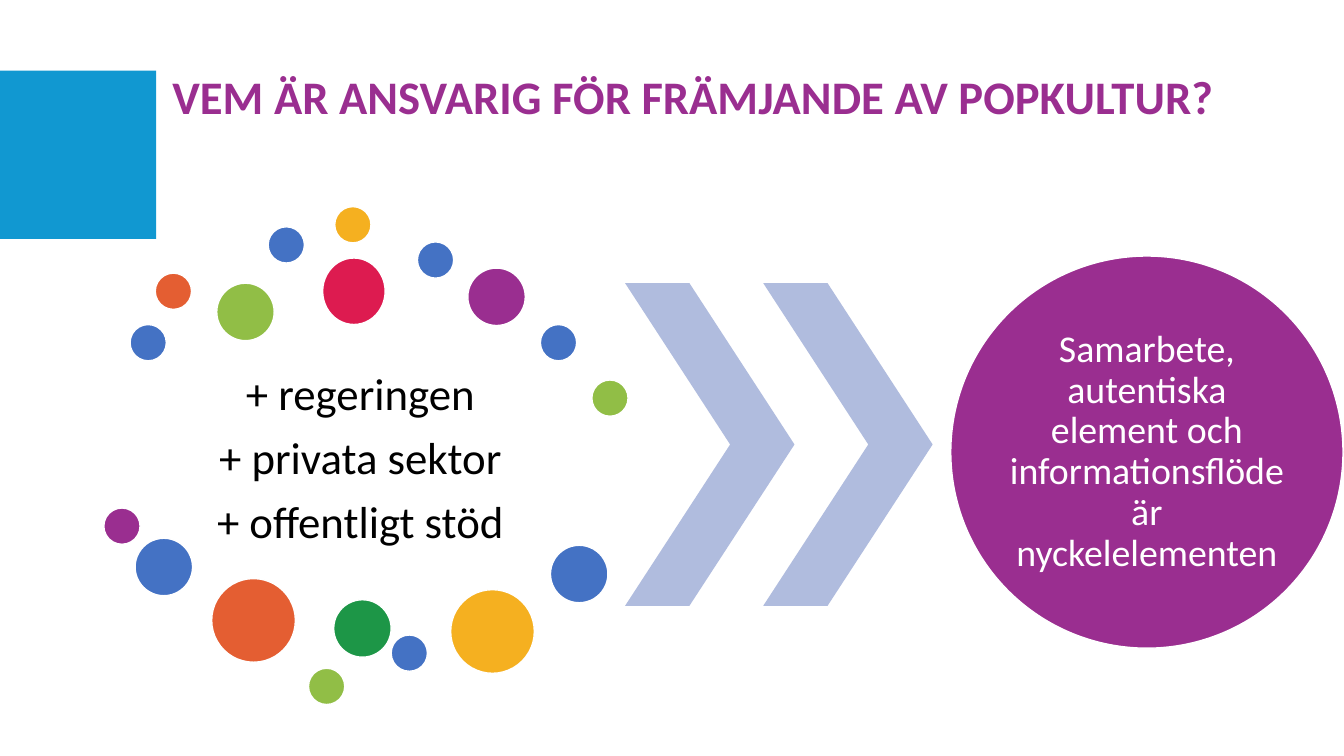
from dataclasses import dataclass

from pptx import Presentation
from pptx.dml.color import RGBColor
from pptx.enum.shapes import MSO_SHAPE
from pptx.enum.text import MSO_ANCHOR, MSO_AUTO_SIZE, PP_ALIGN
from pptx.oxml.ns import qn
from pptx.util import Inches, Pt

RECTANGLE, OVAL, CHEVRON = MSO_SHAPE.RECTANGLE, MSO_SHAPE.OVAL, MSO_SHAPE.CHEVRON
TOP, MIDDLE = MSO_ANCHOR.TOP, MSO_ANCHOR.MIDDLE
LEFT, CENTER = PP_ALIGN.LEFT, PP_ALIGN.CENTER
NO_FIT = MSO_AUTO_SIZE.NONE
TITLE_AND_CONTENT = 1

# The slide is laid out on a grid of square cells, ten to the inch.
CELL = Inches(0.1)
SMALL, MEDIUM, LARGE = 3.6, 5.7, 8.3


@dataclass(frozen=True)
class Theme:
    font: str = "Calibri"
    title_size: float = 33.3
    list_size: float = 32
    result_size: float = 27
    line_spacing: float = 0.9
    list_gap: float = 11.2
    outline: float = 1
    white: str = "FFFFFF"
    black: str = "000000"
    sky: str = "1198D1"
    blue: str = "4472C4"
    orange: str = "E45E32"
    lime: str = "91BE46"
    yellow: str = "F5B020"
    purple: str = "9A2E90"
    red: str = "DD1B50"
    green: str = "1D9647"
    lavender: str = "B0BCDE"


THEME = Theme()

TITLE = "VEM ÄR ANSVARIG FÖR FRÄMJANDE AV POPKULTUR?"
ACTORS = ("+ regeringen", "+ privata sektor", "+ offentligt stöd")
RESULT = "Samarbete, autentiska element och informationsflöde är nyckelelementen"

# column, row, diameter, colour
DOTS = (
    (12.9, 32.2, SMALL, THEME.blue),
    (15.4, 27.1, SMALL, THEME.orange),
    (21.5, 28.1, MEDIUM, THEME.lime),
    (26.6, 22.5, SMALL, THEME.blue),
    (33.2, 20.5, SMALL, THEME.yellow),
    (41.4, 24, SMALL, THEME.blue),
    (46.4, 26.6, MEDIUM, THEME.purple),
    (53.6, 32.2, SMALL, THEME.blue),
    (58.7, 37.7, SMALL, THEME.lime),
    (10.3, 50.4, SMALL, THEME.purple),
    (13.4, 53.4, MEDIUM, THEME.blue),
    (21, 57.4, LARGE, THEME.orange),
    (30.6, 66.3, SMALL, THEME.lime),
    (33.1, 59.5, MEDIUM, THEME.green),
    (38.8, 63, SMALL, THEME.blue),
    (44.7, 58.5, LARGE, THEME.yellow),
    (54.6, 54.1, MEDIUM, THEME.blue),
)


def cells(*counts):
    return [round(count * CELL) for count in counts]


def add_solid(slide, kind, place, color, outlined=False):
    """Add a flat filled shape at (column, row, columns, rows)."""
    shape = slide.shapes.add_shape(kind, *cells(*place))
    shape.shadow.inherit = False
    shape.fill.solid()
    shape.fill.fore_color.rgb = RGBColor.from_string(color)
    if outlined:
        shape.line.color.rgb = RGBColor.from_string(THEME.white)
        shape.line.width = Pt(THEME.outline)
    else:
        shape.line.fill.background()
    return shape


def place_holder(holder, place):
    holder.left, holder.top, holder.width, holder.height = cells(*place)


def set_frame(frame, anchor, inset):
    frame.word_wrap = True
    frame.auto_size = NO_FIT
    frame.vertical_anchor = anchor
    frame.margin_left = frame.margin_right = Inches(inset)
    frame.margin_top = frame.margin_bottom = Inches(inset)


def remove_bullet(para):
    properties = para._p.get_or_add_pPr()
    properties.set("marL", "0")
    properties.set("indent", "0")
    properties.append(properties.makeelement(qn("a:buNone"), {}))


def format_text(frame, size, color, align, bold=False, gap=0):
    for para in frame.paragraphs:
        para.alignment = align
        para.line_spacing = THEME.line_spacing
        para.space_before = Pt(0)
        para.space_after = Pt(gap)
        for run in para.runs:
            run.font.name = THEME.font
            run.font.size = Pt(size)
            run.font.bold = bold
            run.font.color.rgb = RGBColor.from_string(color)


def fill_title(slide):
    title = slide.shapes.title
    place_holder(title, (16.1, 6.9, 105.5, 7.6))
    frame = title.text_frame
    frame.text = TITLE
    set_frame(frame, TOP, 0.05)
    frame.margin_left, frame.margin_right = Inches(0.1), 0
    format_text(frame, THEME.title_size, THEME.purple, LEFT, bold=True)


def fill_actors(slide):
    body = slide.placeholders[1]
    place_holder(body, (9.5, 34.3, 52.5, 22.7))
    frame = body.text_frame
    frame.text = "\n".join(ACTORS)
    set_frame(frame, MIDDLE, 0.04)
    for para in frame.paragraphs:
        remove_bullet(para)
    format_text(frame, THEME.list_size, THEME.black, CENTER, gap=THEME.list_gap)


def add_dots(slide):
    for column, row, diameter, color in DOTS:
        add_solid(slide, OVAL, (column, row, diameter, diameter), color, outlined=True)
    add_solid(slide, OVAL, (32, 25.6, 6.2, 6.6), THEME.red, outlined=True)


def add_chevrons(slide):
    for column in (62, 75.7):
        chevron = add_solid(slide, CHEVRON, (column, 28.1, 16.8, 32), THEME.lavender)
        chevron.adjustments[0] = 0.62


def add_result(slide):
    circle = add_solid(slide, OVAL, (94.3, 25.4, 38.9, 38.9), THEME.purple, outlined=True)
    frame = circle.text_frame
    frame.text = RESULT
    set_frame(frame, MIDDLE, 0)
    format_text(frame, THEME.result_size, THEME.white, CENTER)


def main():
    deck = Presentation()
    deck.slide_width, deck.slide_height = Inches(13.33), Inches(7.5)
    slide = deck.slides.add_slide(deck.slide_layouts[TITLE_AND_CONTENT])
    add_solid(slide, RECTANGLE, (-0.1, 7, 15.6, 16.7), THEME.sky)
    fill_title(slide)
    fill_actors(slide)
    add_dots(slide)
    add_chevrons(slide)
    add_result(slide)
    deck.save("out.pptx")


if __name__ == "__main__":
    main()
